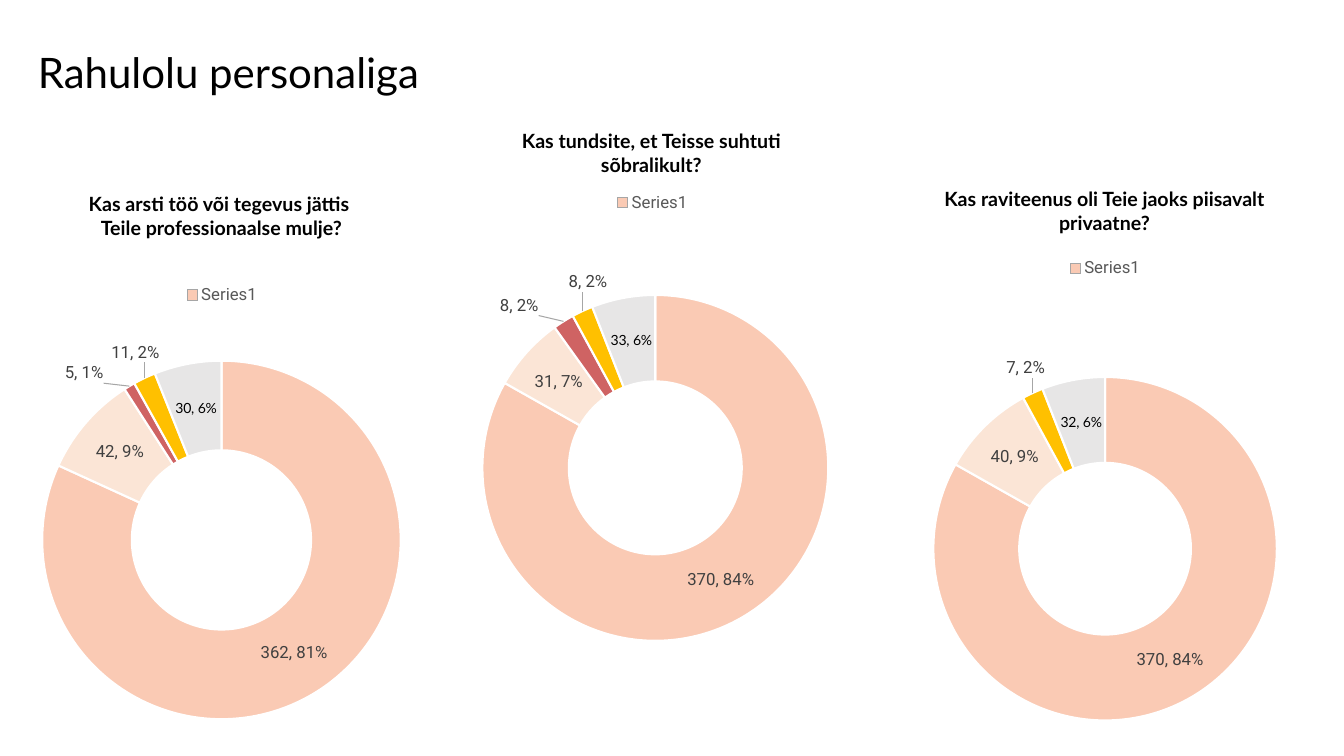
from dataclasses import dataclass

from lxml import etree
from pptx import Presentation
from pptx import util as u
from pptx.chart import data as chart_data
from pptx.dml.color import RGBColor
from pptx.enum import chart as chart_enum
from pptx.enum import text

PX = 9525
CHART_NS = "http://schemas.openxmlformats.org/drawingml/2006/chart"
DRAWING_NS = "http://schemas.openxmlformats.org/drawingml/2006/main"

BLACK = RGBColor(0x00, 0x00, 0x00)
WHITE = RGBColor(0xFF, 0xFF, 0xFF)
LEGEND_GREY = RGBColor(0x59, 0x59, 0x59)
LABEL_GREY = RGBColor(0x40, 0x40, 0x40)
LEADER_GREY = RGBColor(0xA6, 0xA6, 0xA6)
PEACH = RGBColor(0xFA, 0xCA, 0xB4)
CREAM = RGBColor(0xFB, 0xE5, 0xD6)
RED = RGBColor(0xCF, 0x63, 0x63)
AMBER = RGBColor(0xFF, 0xC0, 0x00)
PALE_GREY = RGBColor(0xE7, 0xE6, 0xE6)
RING_COLOURS = (PEACH, CREAM, RED, AMBER, PALE_GREY)


@dataclass(frozen=True)
class Box:
    left: int
    top: int
    width: int
    height: int

    def emu(self) -> tuple[int, ...]:
        return tuple(length * PX for length in (self.left, self.top, self.width, self.height))


@dataclass(frozen=True)
class Question:
    lines: tuple[str, ...]
    heading: Box
    ring: Box
    plot: dict[str, float]
    counts: tuple[int, ...]
    percents: tuple[int, ...]
    label_shifts: dict[int, tuple[int, int]]
    legend_at: dict[str, float] | None = None


QUESTIONS = (
    Question(
        ("Kas arsti töö või tegevus jättis ", "Teile professionaalse mulje?"),
        Box(-53, 178, 528, 55), Box(-60, 246, 542, 542),
        {"x": 0.18, "y": 0.18, "w": 0.64, "h": 0.63},
        (362, 42, 5, 11, 30), (81, 9, 1, 2, 6),
        {2: (-65, -49), 3: (-27, -63)},
        {"x": 0.43, "y": 0.04},
    ),
    Question(
        ("Kas tundsite, et Teisse suhtuti sõbralikult?",),
        Box(446, 118, 349, 55), Box(355, 173, 533, 540),
        {"x": 0.19, "y": 0.2, "w": 0.63, "h": 0.61},
        (370, 31, 8, 8, 33), (84, 7, 2, 2, 6),
        {2: (-64, -50), 3: (-12, -65)},
    ),
    Question(
        ("Kas raviteenus oli Teie jaoks piisavalt privaatne?",),
        Box(871, 173, 362, 55), Box(780, 235, 545, 564),
        {"x": 0.19, "y": 0.22, "w": 0.62, "h": 0.58},
        (370, 40, 1, 7, 32), (84, 9, 0, 2, 6),
        {2: (-57, -47), 3: (-24, -61)},
    ),
)


def chart_element(tag: str, **attributes: str):
    return etree.Element(f"{{{CHART_NS}}}{tag}", attributes)


def manual_layout(position: dict[str, float], inner: bool = False, edges: bool = False):
    layout = chart_element("layout")
    manual = chart_element("manualLayout")
    layout.append(manual)
    if inner:
        manual.append(chart_element("layoutTarget", val="inner"))
    if edges:
        manual.append(chart_element("xMode", val="edge"))
        manual.append(chart_element("yMode", val="edge"))
    for name, value in position.items():
        manual.append(chart_element(name, val=f"{value:.4f}"))
    return layout


def set_layout(parent, index: int, layout) -> None:
    for existing in parent.findall(f"{{{CHART_NS}}}layout"):
        parent.remove(existing)
    parent.insert(index, layout)


def style_font(font, name: str, size: int, colour: RGBColor, bold: bool = False) -> None:
    font.name = name
    font.size = u.Pt(size)
    font.bold = bold
    font.color.rgb = colour


def add_leader_lines(labels) -> None:
    leaders = chart_element("leaderLines")
    properties = chart_element("spPr")
    leaders.append(properties)
    line = etree.SubElement(properties, f"{{{DRAWING_NS}}}ln", w="9525")
    fill = etree.SubElement(line, f"{{{DRAWING_NS}}}solidFill")
    etree.SubElement(fill, f"{{{DRAWING_NS}}}srgbClr", val=str(LEADER_GREY))
    labels.append(leaders)


def add_ring(slide, question: Question) -> None:
    ring_data = chart_data.CategoryChartData()
    ring_data.categories = ["1", "2", "3", "4", "5"]
    ring_data.add_series("Series1", question.percents)
    frame = slide.shapes.add_chart(
        chart_enum.XL_CHART_TYPE.DOUGHNUT, *question.ring.emu(), ring_data
    )
    chart = frame.chart
    chart.has_title = False
    style_font(chart.font, "Calibri", 10, BLACK)
    chart.has_legend = True
    legend = chart.legend
    legend.position = chart_enum.XL_LEGEND_POSITION.TOP
    legend.include_in_layout = True
    style_font(legend.font, "Roboto", 12, LEGEND_GREY)
    if question.legend_at:
        set_layout(legend._element, 1, manual_layout(question.legend_at, edges=True))
    plot_area = chart._chartSpace.chart.plotArea
    set_layout(plot_area, 0, manual_layout(question.plot, inner=True, edges=True))

    plot = chart.plots[0]
    plot.vary_by_categories = False
    series = plot.series[0]
    series.format.fill.solid()
    series.format.fill.fore_color.rgb = PEACH
    series.format.line.color.rgb = WHITE
    series.format.line.width = u.Pt(1.5)
    series.data_labels.show_value = True
    style_font(series.data_labels.font, "Roboto", 12, LABEL_GREY)
    for index, (colour, count) in enumerate(zip(RING_COLOURS, question.counts)):
        point = series.points[index]
        point.format.fill.solid()
        point.format.fill.fore_color.rgb = colour
        point.format.line.color.rgb = WHITE
        point.format.line.width = u.Pt(1.5)
        label = point.data_label
        if colour == PALE_GREY:
            style_font(label.font, "Lato", 10, BLACK)
        else:
            style_font(label.font, "Roboto", 12, LABEL_GREY)
        number_format = chart_element("numFmt", formatCode=f'"{count}, "0"%"', sourceLinked="0")
        label._dLbl.insert(1, number_format)
        if index in question.label_shifts:
            across, down = question.label_shifts[index]
            shift = {"x": across / question.ring.width, "y": down / question.ring.height}
            label._dLbl.insert(1, manual_layout(shift))
    add_leader_lines(series.data_labels._element)


def set_frame(frame, anchor) -> None:
    frame.word_wrap = True
    frame.vertical_anchor = anchor
    frame.margin_left = frame.margin_right = 5 * PX
    frame.margin_top = frame.margin_bottom = 5 * PX


def add_heading(slide, question: Question) -> None:
    frame = slide.shapes.add_textbox(*question.heading.emu()).text_frame
    set_frame(frame, text.MSO_ANCHOR.TOP)
    frame.auto_size = text.MSO_AUTO_SIZE.SHAPE_TO_FIT_TEXT
    for index, line in enumerate(question.lines):
        paragraph = frame.add_paragraph() if index else frame.paragraphs[0]
        paragraph.alignment = text.PP_ALIGN.CENTER
        run = paragraph.add_run()
        run.text = line
        style_font(run.font, "Lato", 14, BLACK, bold=True)


def add_title(slide) -> None:
    title = slide.shapes.title
    title.left, title.top, title.width, title.height = Box(31, 2, 1104, 139).emu()
    frame = title.text_frame
    set_frame(frame, text.MSO_ANCHOR.MIDDLE)
    frame.auto_size = text.MSO_AUTO_SIZE.NONE
    paragraph = frame.paragraphs[0]
    paragraph.alignment = text.PP_ALIGN.LEFT
    paragraph.line_spacing = 0.9
    run = paragraph.add_run()
    run.text = "Rahulolu personaliga"
    style_font(run.font, "Lato", 30, BLACK)


def main() -> None:
    presentation = Presentation()
    presentation.slide_width = 1280 * PX
    presentation.slide_height = 720 * PX
    slide = presentation.slides.add_slide(presentation.slide_layouts[5])
    add_title(slide)
    for question in QUESTIONS:
        add_ring(slide, question)
    for question in QUESTIONS:
        add_heading(slide, question)
    presentation.save("out.pptx")


if __name__ == "__main__":
    main()
